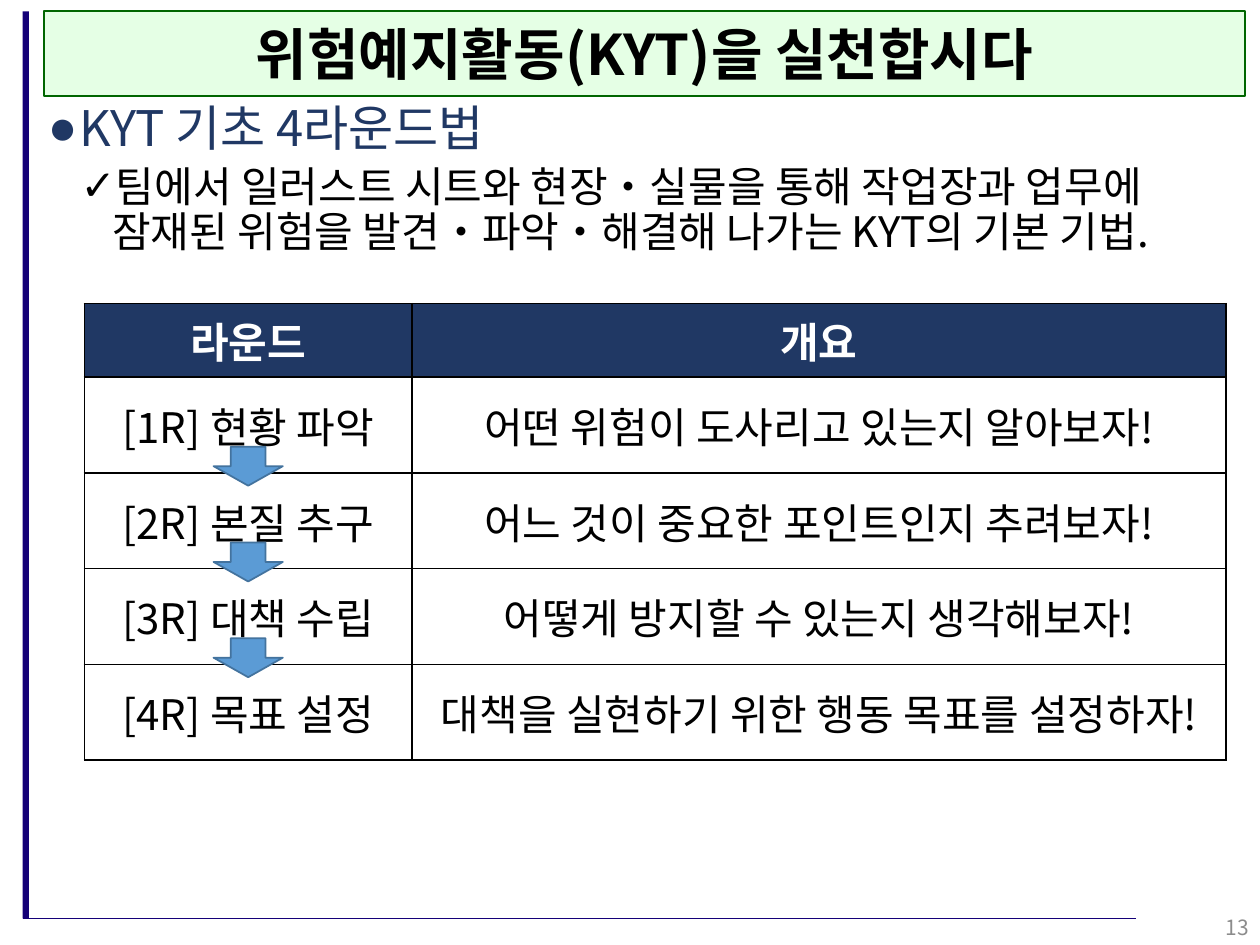
"""Build the KYT four-round method slide."""
from lxml.etree import SubElement
from pptx import Presentation
from pptx.dml.color import RGBColor
from pptx.enum.shapes import MSO_CONNECTOR as Connector, MSO_SHAPE as Shape
from pptx.enum.text import MSO_ANCHOR as Anchor, MSO_AUTO_SIZE as AutoSize, PP_ALIGN as Align
from pptx.oxml.ns import qn
from pptx.util import Inches, Pt

BLACK = RGBColor(0x00, 0x00, 0x00)
WHITE = RGBColor(0xFF, 0xFF, 0xFF)
NAVY = RGBColor(0x20, 0x38, 0x64)
INDIGO = RGBColor(0x14, 0x00, 0x78)
PALE_GREEN = RGBColor(0xCC, 0xFF, 0xCC)
DARK_GREEN = RGBColor(0x00, 0x66, 0x00)
ARROW_BLUE = RGBColor(0x5B, 0x9B, 0xD5)
ARROW_EDGE = RGBColor(0x43, 0x73, 0x9E)
GREY = RGBColor(0x8C, 0x8C, 0x8C)
FONT = "Noto Sans CJK JP"

TABLE_LEFT, TABLE_TOP = 0.67, 2.41
COLUMNS = (2.6, 6.46)
HEADER_HEIGHT, ROUND_HEIGHT = 0.58, 0.76
ARROW_WIDTH, ARROW_HEIGHT, ARROW_RISE = 0.55, 0.31, 0.05

ROUNDS = (
    ("라운드", "개요"),
    ("[1R] 현황 파악", "어떤 위험이 도사리고 있는지 알아보자!"),
    ("[2R] 본질 추구", "어느 것이 중요한 포인트인지 추려보자!"),
    ("[3R] 대책 수립", "어떻게 방지할 수 있는지 생각해보자!"),
    ("[4R] 목표 설정", "대책을 실현하기 위한 행동 목표를 설정하자!"),
)
POINTS = (
    ("KYT 기초 4라운드법", "●", 28, NAVY, 0.25, 10),
    ("팀에서 일러스트 시트와 현장・실물을 통해 작업장과 업무에 "
     "잠재된 위험을 발견・파악・해결해 나가는 KYT의 기본 기법.", "✓", 24, BLACK, 0.51, 5),
)


def place(item, left, top, width, height):
    item.left, item.top = Inches(left), Inches(top)
    item.width, item.height = Inches(width), Inches(height)


def write(paragraph, text, size, color, bold=False, align=None):
    paragraph.text = text
    paragraph.alignment = align
    font = paragraph.font
    font.size, font.bold, font.name = Pt(size), bold, FONT
    font.color.rgb = color
    properties = paragraph._p.pPr.find(qn("a:defRPr"))
    SubElement(properties, qn("a:ea")).set("typeface", FONT)


def paint(item, fill, edge=None):
    item.fill.solid()
    item.fill.fore_color.rgb = fill
    if edge is None:
        item.line.fill.background()
    else:
        item.line.color.rgb = edge
        item.line.width = Pt(1)


def add_block(slide, kind, box, fill, edge=None):
    block = slide.shapes.add_shape(kind, *map(Inches, box))
    block.shadow.inherit = False
    paint(block, fill, edge)


def add_frame(slide):
    add_block(slide, Shape.RECTANGLE, (0.18, 0.09, 0.05, 7.2), INDIGO)
    base = slide.shapes.add_connector(
        Connector.STRAIGHT, Inches(0.18), Inches(7.29), Inches(9.02), Inches(7.29))
    base.line.color.rgb = INDIGO
    base.line.width = Pt(1)
    SubElement(base._element.spPr, qn("a:effectLst"))


def fill_title(title):
    place(title, 0.35, 0.09, 9.53, 0.67)
    paint(title, PALE_GREEN, DARK_GREEN)
    tint = title._element.spPr.find(qn("a:solidFill"))[0]
    SubElement(tint, qn("a:alpha")).set("val", "50000")
    frame = title.text_frame
    frame.auto_size, frame.vertical_anchor = AutoSize.NONE, Anchor.MIDDLE
    write(frame.paragraphs[0], "위험예지활동(KYT)을 실천합시다", 32, BLACK, True, Align.CENTER)


def fill_points(body):
    place(body, 0.28, 0.78, 9.68, 6.67)
    frame = body.text_frame
    frame.auto_size = AutoSize.NONE
    for level, (text, bullet, size, color, indent, before) in enumerate(POINTS):
        point = frame.add_paragraph() if level else frame.paragraphs[0]
        write(point, text, size, color)
        point.level, point.line_spacing, point.space_before = level, 0.9, Pt(before)
        layout = point._p.pPr
        layout.set("marL", str(Inches(indent)))
        layout.set("indent", str(Inches(-0.25)))
        mark = SubElement(layout, qn("a:buChar"))
        mark.set("char", bullet)
        layout.find(qn("a:defRPr")).addprevious(mark)


def add_borders(cell):
    properties = cell._tc.get_or_add_tcPr()
    for position, side in enumerate(("a:lnL", "a:lnR", "a:lnT", "a:lnB")):
        border = SubElement(properties, qn(side), w=str(Pt(1)))
        ink = SubElement(border, qn("a:solidFill"))
        SubElement(ink, qn("a:srgbClr")).set("val", str(BLACK))
        properties.insert(position, border)


def add_rounds(slide):
    heights = [HEADER_HEIGHT] + [ROUND_HEIGHT] * (len(ROUNDS) - 1)
    box = TABLE_LEFT, TABLE_TOP, sum(COLUMNS), sum(heights)
    table = slide.shapes.add_table(len(ROUNDS), len(COLUMNS), *map(Inches, box)).table
    for column, width in zip(table.columns, COLUMNS):
        column.width = Inches(width)
    for index, (texts, height) in enumerate(zip(ROUNDS, heights)):
        header = index == 0
        table.rows[index].height = Inches(height)
        for cell, text in zip(table.rows[index].cells, texts):
            cell.fill.solid()
            cell.fill.fore_color.rgb = NAVY if header else WHITE
            cell.vertical_anchor = Anchor.TOP if header else Anchor.MIDDLE
            write(cell.text_frame.paragraphs[0], text, 24,
                  WHITE if header else BLACK, header, Align.CENTER)
            add_borders(cell)


def add_arrows(slide):
    left = TABLE_LEFT + (COLUMNS[0] - ARROW_WIDTH) / 2
    for step in range(1, len(ROUNDS) - 1):
        border = TABLE_TOP + HEADER_HEIGHT + step * ROUND_HEIGHT
        top = border - ARROW_HEIGHT / 2 - ARROW_RISE
        add_block(slide, Shape.DOWN_ARROW, (left, top, ARROW_WIDTH, ARROW_HEIGHT),
                  ARROW_BLUE, ARROW_EDGE)


def add_page_number(slide):
    frame = slide.shapes.add_textbox(*map(Inches, (7.76, 7.16, 2.25, 0.4))).text_frame
    frame.word_wrap, frame.vertical_anchor = True, Anchor.MIDDLE
    write(frame.paragraphs[0], "13", 12, GREY, align=Align.RIGHT)


def main():
    deck = Presentation()
    deck.slide_width, deck.slide_height = Inches(10), Inches(7.5)
    slide = deck.slides.add_slide(deck.slide_layouts[1])
    add_frame(slide)
    fill_title(slide.shapes.title)
    fill_points(slide.placeholders[1])
    add_rounds(slide)
    add_arrows(slide)
    add_page_number(slide)
    deck.save("out.pptx")


if __name__ == "__main__":
    main()
